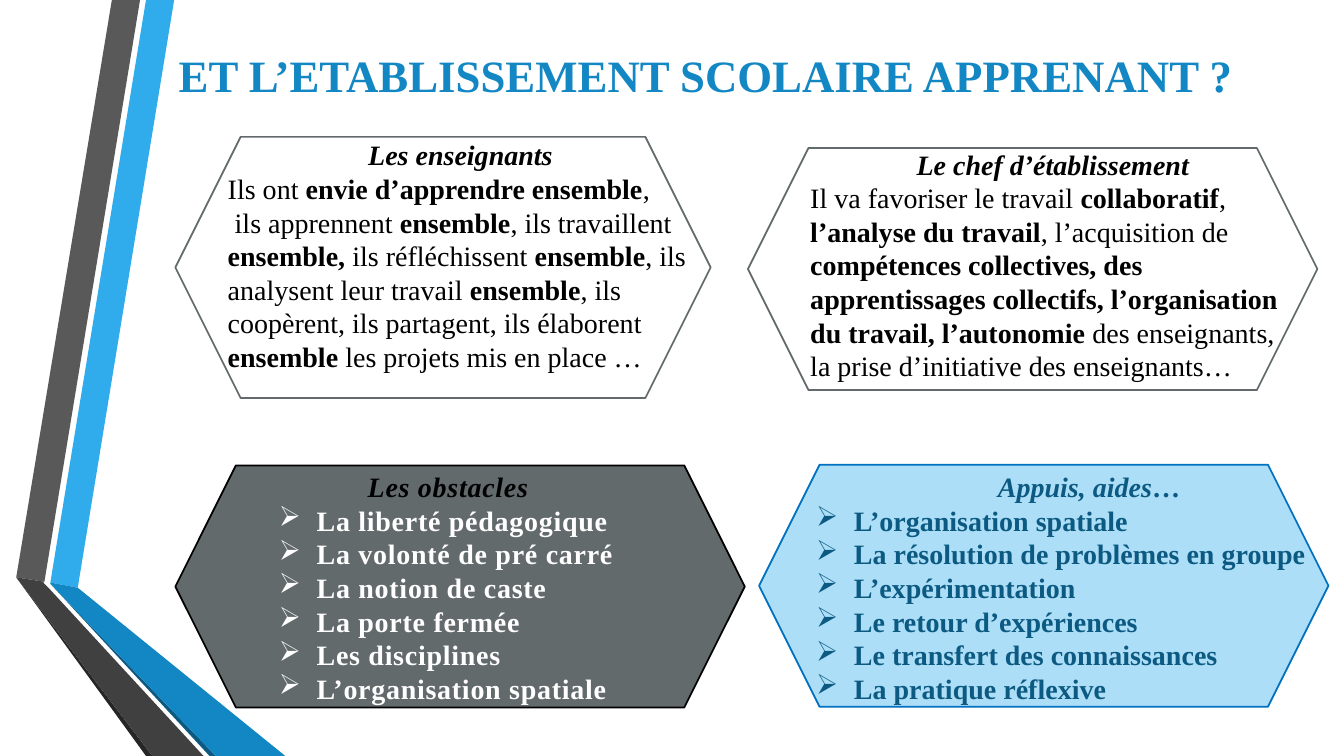
import pptx
import pptx.util
import pptx.dml.color
import pptx.enum.shapes
import pptx.enum.text
import lxml.etree

Cm, Pt = pptx.util.Cm, pptx.util.Pt
RGB = pptx.dml.color.RGBColor
ALIGN = pptx.enum.text.PP_ALIGN
ANCHOR = pptx.enum.text.MSO_ANCHOR

FONT = "Times New Roman"
BLACK = RGB(0x00, 0x00, 0x00)
WHITE = RGB(0xFF, 0xFF, 0xFF)
SLATE = RGB(0x63, 0x6A, 0x6C)
SKY = RGB(0x30, 0xAC, 0xEC)
BLUE = RGB(0x12, 0x87, 0xC3)
NAVY = RGB(0x0C, 0x5A, 0x82)
PALE = RGB(0xAC, 0xDE, 0xF7)
EDGE = RGB(0x00, 0x70, 0xC0)
GREY = RGB(0x59, 0x59, 0x59)
DARK = RGB(0x40, 0x40, 0x40)
COAL = RGB(0x26, 0x26, 0x26)

# Ribbon outlines, in cm from the corner of the ribbon's box
BANDS = [
    (SKY, [(1.27, 14.68), (1.96, 14.81), (4.39, 0), (3.68, 0)]),
    (GREY, [(3.53, 0), (2.82, 0), (0.41, 14.55), (1.12, 14.66)]),
    (COAL, [(0.41, 14.55), (3.68, 19.05), (3.84, 19.05)]),
    (NAVY, [(1.27, 14.71), (5.28, 19.05), (5.44, 19.05)]),
    (BLUE, [(1.27, 14.71), (5.44, 19.05), (7.19, 19.05), (1.96, 14.81),
            (1.27, 14.68)]),
    (DARK, [(5.13, 19.05), (1.22, 14.81), (1.09, 14.68), (1.12, 14.66),
            (0.41, 14.55), (3.84, 19.05)]),
]

# Panel wording: each line is a list of (text, style) runs
STAFF = [
    [("Ils ont ", ""), ("envie d’apprendre ensemble", "b"), (",", "")],
    [(" ils apprennent ", ""), ("ensemble", "b"),
     (", ils travaillent ", ""), ("ensemble, ", "b"),
     ("ils réfléchissent ", ""), ("ensemble", "b"),
     (", ils analysent leur travail ", ""), ("ensemble", "b"),
     (", ils", "")],
    [("coopèrent, ils partagent, ils élaborent ", ""), ("ensemble", "b"),
     (" les projets mis en place …", "")],
]
HEAD = [
    [("Il va favoriser le travail ", ""), ("collaboratif", "b"), (",", "")],
    [("l’analyse du travail", "b"), (", l’acquisition de", "")],
    [("compétences collectives, des apprentissages collectifs, "
      "l’organisation du travail, l’autonomie ", "b"),
     ("des enseignants, la prise d’initiative des enseignants…", "")],
]
LIMITS = ["La liberté pédagogique", "La volonté de pré carré",
          "La notion de caste", "La porte fermée", "Les disciplines",
          "L’organisation spatiale"]
HELP = ["L’organisation spatiale", "La résolution de problèmes en groupe",
        "L’expérimentation", "Le retour d’expériences",
        "Le transfert des connaissances", "La pratique réflexive"]


def add_run(para, text, style, color, size=20, space=0):
    run = para.add_run()
    run.text = text
    font = run.font
    font.name, font.size = FONT, Pt(size)
    font.bold, font.italic = "b" in style, "i" in style
    font.color.rgb = color
    if space:
        run._r.get_or_add_rPr().set("spc", str(space))


def add_box(slide, box):
    frame = slide.shapes.add_textbox(*[Cm(v) for v in box]).text_frame
    frame.word_wrap = True
    return frame


def set_bullet(para):
    props = para._p.get_or_add_pPr()
    props.set("marL", str(Cm(0.95)))
    props.set("indent", str(Cm(-0.95)))
    mark = lxml.etree.SubElement(props, pptx.oxml.ns.qn("a:buChar"))
    mark.set("char", "➢")


def ribbon(slide, left, top):
    for color, points in BANDS:
        dots = [((left + x) * 100, (top + y) * 100) for x, y in points]
        pen = slide.shapes.build_freeform(*dots[0], scale=Cm(0.01))
        pen.add_line_segments(dots[1:], close=True)
        band = pen.convert_to_shape()
        band.shadow.inherit = False
        band.fill.solid()
        band.fill.fore_color.rgb = color
        band.line.fill.background()


def title(slide, box):
    frame = add_box(slide, box)
    frame.vertical_anchor = ANCHOR.MIDDLE
    para = frame.paragraphs[0]
    para.alignment = ALIGN.CENTER
    add_run(para, "ET L’ETABLISSEMENT SCOLAIRE APPRENANT ? ", "b", BLUE, 32)


def panel(slide, box, inset, fill, edge, head, lines, inks, bullet=False,
          shift=None, space=0):
    """Hexagon filling box; inset is the text's offset and size in it."""
    hexa = slide.shapes.add_shape(
        pptx.enum.shapes.MSO_SHAPE.HEXAGON, *[Cm(v) for v in box])
    hexa.shadow.inherit = False
    hexa.fill.solid()
    hexa.fill.fore_color.rgb = fill
    hexa.line.color.rgb = edge
    hexa.line.width = Pt(1.25)

    # Heading, then body lines
    dx, dy, wide, high = inset
    frame = add_box(slide, (box[0] + dx, box[1] + dy, wide, high))
    for num, runs in enumerate([head] + lines):
        para = frame.add_paragraph() if num else frame.paragraphs[0]
        para.line_spacing = Pt(24)
        if num == 0 and shift:
            para._p.get_or_add_pPr().set("indent", str(Cm(shift)))
        elif num == 0:
            para.alignment = ALIGN.CENTER
        elif bullet:
            set_bullet(para)
        for text, style in runs:
            add_run(para, text, style, inks[min(num, 1)], space=space)


def main():
    deck = pptx.Presentation()
    deck.slide_width, deck.slide_height = Cm(33.87), Cm(19.05)
    slide = deck.slides.add_slide(deck.slide_layouts[6])

    ribbon(slide, 0, 0)
    title(slide, (4.01, 0, 27.84, 3.78))

    # Upper panels: prose
    panel(slide, (4.42, 3.45, 13.49, 6.58), (1.07, -0.1, 12.65, 6.25),
          WHITE, SLATE, [("Les enseignants", "bi")], STAFF,
          (BLACK, BLACK), shift=3.54)
    panel(slide, (18.85, 3.73, 14.35, 6.1), (1.32, -0.15, 12.73, 6.25),
          WHITE, SLATE, [("Le chef d’établissement", "bi")], HEAD,
          (BLACK, BLACK))

    # Lower panels: bullet lists
    panel(slide, (4.42, 11.73, 14.35, 6.1), (2.36, -0.02, 9.02, 7.09),
          SLATE, BLACK, [("Les obstacles", "bi")],
          [[(text, "b")] for text in LIMITS], (BLACK, WHITE),
          bullet=True, space=50)
    panel(slide, (19.13, 11.71, 14.35, 6.1), (1.19, 0, 14.25, 7.2),
          PALE, EDGE, [("Appuis, aides", "bi"), ("…", "b")],
          [[(text, "b")] for text in HELP], (NAVY, NAVY), bullet=True)

    deck.save("out.pptx")


if __name__ == "__main__":
    main()
